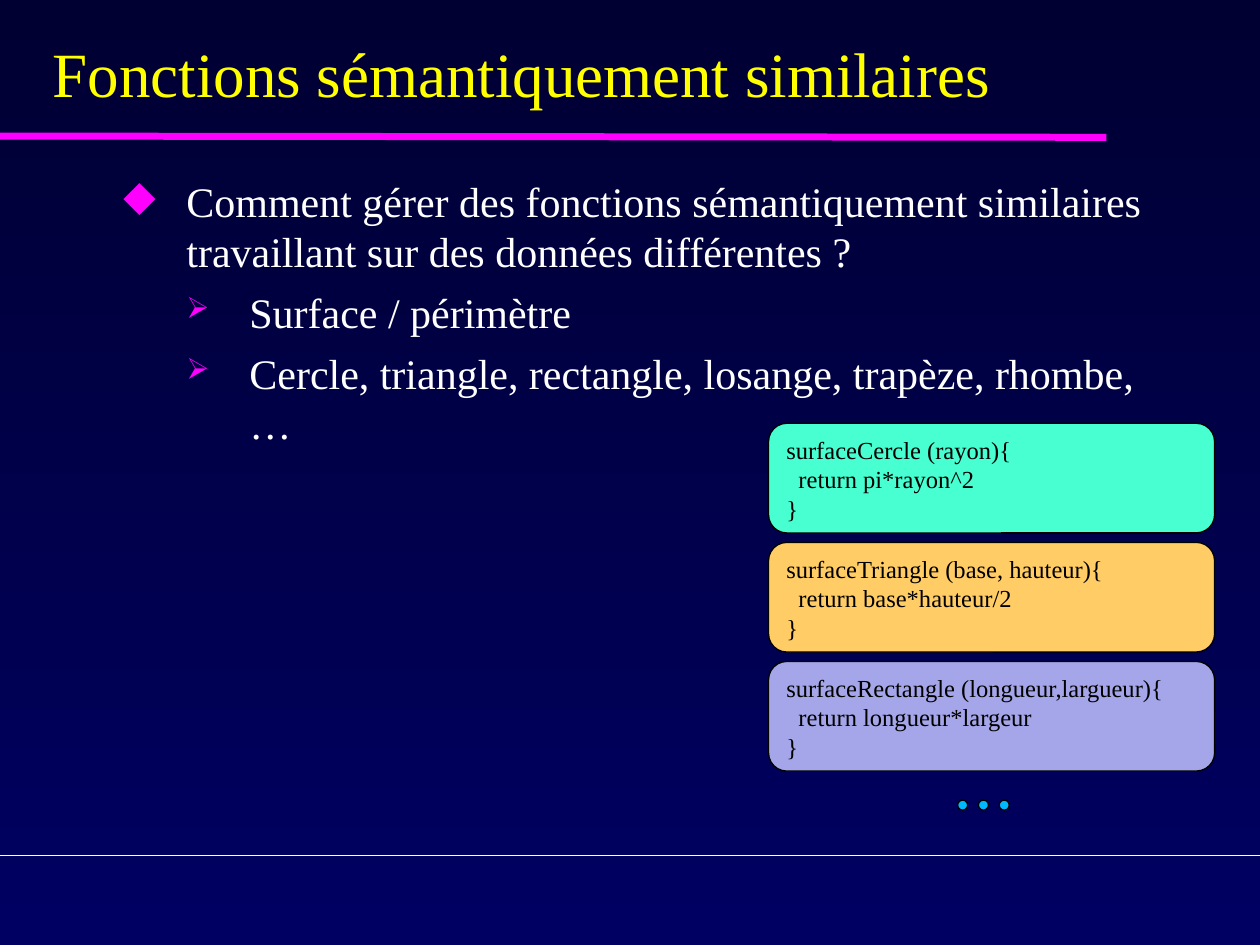
from dataclasses import dataclass

from lxml import etree
from pptx import Presentation
from pptx.dml.color import RGBColor
from pptx.enum.shapes import MSO_CONNECTOR, MSO_SHAPE
from pptx.enum.text import MSO_ANCHOR, PP_ALIGN
from pptx.oxml.ns import qn
from pptx.shapes.autoshape import Shape
from pptx.slide import Slide
from pptx.text.text import TextFrame, _Paragraph
from pptx.util import Inches, Pt

STRAIGHT = MSO_CONNECTOR.STRAIGHT
ROUNDED = MSO_SHAPE.ROUNDED_RECTANGLE
OVAL = MSO_SHAPE.OVAL
TOP = MSO_ANCHOR.TOP
MIDDLE = MSO_ANCHOR.MIDDLE
LEFT = PP_ALIGN.LEFT
FONT = "Times New Roman"
COLORS = {
    "night": "000032",
    "navy": "000062",
    "yellow": "FFFF00",
    "magenta": "FF00FF",
    "white": "FFFFFF",
    "black": "000000",
    "mint": "47FFD1",
    "orange": "FFCC66",
    "lavender": "A5A5E9",
    "cyan": "00B8FF",
}


@dataclass
class Bullet:
    text: str
    symbol: str
    level: int = 0
    size: int = 100


@dataclass
class CodeBox:
    code: str
    fill: str


@dataclass
class Rule:
    top: float
    right: float
    end_top: float
    color: str
    width: float


RULES = [
    Rule(6.79, 10, 6.79, "white", 0.75),
    Rule(1.08, 8.78, 1.09, "magenta", 4),
]
BULLETS = [
    Bullet("Comment gérer des fonctions sémantiquement similaires "
           "travaillant sur des données différentes ?", "◆"),
    Bullet("Surface / périmètre", "➢", 1, 70),
    Bullet("Cercle, triangle, rectangle, losange, trapèze, rhombe, …", "➢", 1, 70),
]
CODE_BOXES = [
    CodeBox("surfaceCercle (rayon){\n  return pi*rayon^2\n}", "mint"),
    CodeBox("surfaceTriangle (base, hauteur){\n  return base*hauteur/2\n}", "orange"),
    CodeBox("surfaceRectangle (longueur,largueur){\n  return longueur*largeur\n}", "lavender"),
]


def rgb(name: str) -> RGBColor:
    """Return a named colour."""
    return RGBColor.from_string(COLORS[name])


def style_para(para: _Paragraph, size: float, color: str) -> None:
    """Align a paragraph left and format its runs."""
    para.alignment = LEFT
    for span in para.runs:
        span.font.name = FONT
        span.font.size = Pt(size)
        span.font.color.rgb = rgb(color)


def paint_background(page: Slide) -> None:
    """Fill the page with a downward gradient."""
    fill = page.background.fill
    fill.gradient()
    fill.gradient_angle = 270
    for stop, position, name in zip(fill.gradient_stops, (0, 1), ("night", "navy")):
        stop.position = position
        stop.color.rgb = rgb(name)


def add_rule(page: Slide, rule: Rule) -> None:
    """Draw a line from the left edge of the page."""
    line = page.shapes.add_connector(
        STRAIGHT, Inches(0), Inches(rule.top), Inches(rule.right), Inches(rule.end_top))
    line.line.color.rgb = rgb(rule.color)
    line.line.width = Pt(rule.width)
    etree.SubElement(line._element.spPr, qn("a:effectLst"))


def add_text(page: Slide, left: float, top: float, width: float, height: float) -> TextFrame:
    """Add a wrapping text box without margins."""
    box = page.shapes.add_textbox(Inches(left), Inches(top), Inches(width), Inches(height))
    frame = box.text_frame
    frame.word_wrap = True
    frame.margin_left = frame.margin_right = frame.margin_top = frame.margin_bottom = 0
    return frame


def add_title(page: Slide, text: str) -> None:
    """Add the page title."""
    frame = add_text(page, 0.42, 0.31, 9.57, 0.67)
    frame.vertical_anchor = MIDDLE
    frame.text = text
    para = frame.paragraphs[0]
    para.line_spacing = 0.74
    style_para(para, 36, "yellow")


def set_bullet(para: _Paragraph, bullet: Bullet) -> None:
    """Give a paragraph its indent and coloured bullet."""
    properties = para._p.get_or_add_pPr()
    properties.set("marL", str(Inches(0.5 * (bullet.level + 1))))
    properties.set("indent", str(Inches(-0.5)))
    color = etree.SubElement(properties, qn("a:buClr"))
    etree.SubElement(color, qn("a:srgbClr"), val=COLORS["magenta"])
    etree.SubElement(properties, qn("a:buSzPct"), val=str(bullet.size * 1000))
    etree.SubElement(properties, qn("a:buChar"), char=bullet.symbol)


def add_bullets(page: Slide, bullets: list[Bullet]) -> None:
    """Add the bulleted body text."""
    frame = add_text(page, 0.98, 1.39, 8.37, 4.75)
    frame.text = "\n".join(bullet.text for bullet in bullets)
    for index, (para, bullet) in enumerate(zip(frame.paragraphs, bullets)):
        para.level = bullet.level
        set_bullet(para, bullet)
        if index:
            para.space_before = Pt(6)
        style_para(para, 24, "white")


def add_outlined(page: Slide, kind: MSO_SHAPE, left: float, top: float,
                 width: float, height: float, fill: str) -> Shape:
    """Add a filled shape with a thin black outline."""
    shape = page.shapes.add_shape(
        kind, Inches(left), Inches(top), Inches(width), Inches(height))
    shape.shadow.inherit = False
    shape.fill.solid()
    shape.fill.fore_color.rgb = rgb(fill)
    shape.line.color.rgb = rgb("black")
    shape.line.width = Pt(0.75)
    return shape


def add_code_box(page: Slide, top: float, code_box: CodeBox) -> None:
    """Add a rounded box holding a code sample."""
    box = add_outlined(page, ROUNDED, 6.1, top, 3.54, 0.87, code_box.fill)
    frame = box.text_frame
    frame.vertical_anchor = TOP
    frame.text = code_box.code
    for para in frame.paragraphs:
        style_para(para, 14, "black")


def main() -> None:
    """Build and save the deck."""
    deck = Presentation()
    deck.slide_width, deck.slide_height = Inches(10), Inches(7.5)
    page = deck.slides.add_slide(deck.slide_layouts[6])
    paint_background(page)
    for rule in RULES:
        add_rule(page, rule)
    add_title(page, "Fonctions sémantiquement similaires")
    add_bullets(page, BULLETS)
    for index, code_box in enumerate(CODE_BOXES):
        add_code_box(page, 3.36 + 0.945 * index, code_box)
    for index in range(3):
        add_outlined(page, OVAL, 7.6 + 0.165 * index, 6.35, 0.08, 0.08, "cyan")
    deck.save("out.pptx")


if __name__ == "__main__":
    main()
